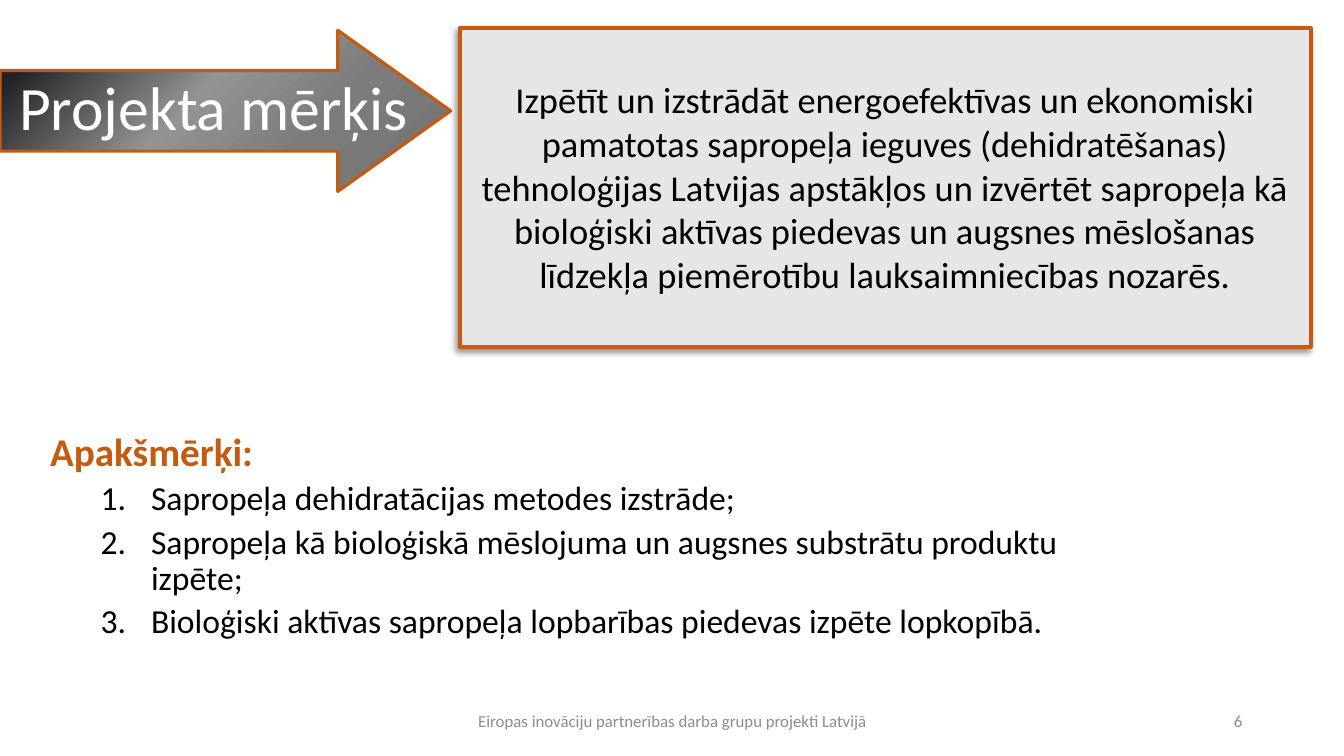
"""Builds the slide on the project goal and its sub-goals."""
from dataclasses import dataclass

import pptx
import pptx.dml.color
import pptx.enum.shapes
import pptx.enum.text
import pptx.oxml
import pptx.oxml.ns
import pptx.util
from pptx.util import Inches

ALIGN = pptx.enum.text.PP_ALIGN
ANCHOR = pptx.enum.text.MSO_ANCHOR
SHAPE = pptx.enum.shapes.MSO_SHAPE
NAMESPACE = pptx.oxml.ns.nsdecls("a")


@dataclass(frozen=True)
class Theme:
    """Colours, font and type sizes of the slide."""
    font: str = "Calibri"
    accent: str = "C55A11"
    panel: str = "E7E6E6"
    ink: str = "000000"
    light: str = "FFFFFF"
    muted: str = "8C8C8C"
    gradient: tuple = ((9, "222125"), (43, "939393"), (68, "7C7C7C"), (97, "747474"))
    title: int = 44
    heading: int = 28
    goal: int = 26
    item: int = 24
    footer: int = 12


def apply(target, values):
    """Sets each value of a dict as an attribute of the target."""
    for name, value in values.items():
        setattr(target, name, value)


def rgb(colour):
    """Turns a hex string into a colour."""
    return pptx.dml.color.RGBColor.from_string(colour)


class SlideBuilder:
    """Holds the theme and the current slide."""

    def __init__(self, slide, theme):
        """Keeps the slide and the theme."""
        self.slide, self.theme = slide, theme

    def add_text(self, para, text, size, colour, bold=False, **layout):
        """Fills one styled paragraph."""
        apply(para, layout)
        span = para.add_run()
        span.text = text
        apply(span.font, {"name": self.theme.font, "size": pptx.util.Pt(size), "bold": bold})
        span.font.color.rgb = rgb(colour)

    def frame(self, box, anchor):
        """Prepares the text frame of a box."""
        apply(box.text_frame, {"word_wrap": True, "vertical_anchor": anchor,
                               "auto_size": pptx.enum.text.MSO_AUTO_SIZE.NONE})
        return box.text_frame

    def title(self, text, left, top, width, height):
        """Places the title in front of the shapes drawn so far."""
        box = self.slide.shapes.title
        apply(box, {"left": left, "top": top, "width": width, "height": height})
        box.element.getparent().append(box.element)
        para = self.frame(box, ANCHOR.MIDDLE).paragraphs[0]
        self.add_text(para, text, self.theme.title, self.theme.light,
                      alignment=ALIGN.LEFT, line_spacing=0.9)

    def shape(self, kind, line_width, *place):
        """Adds an outlined preset shape without a shadow."""
        shape = self.slide.shapes.add_shape(kind, *place)
        shape.shadow.inherit = False
        shape.line.color.rgb = rgb(self.theme.accent)
        shape.line.width = pptx.util.Pt(line_width)
        return shape

    def arrow(self, *place):
        """Adds the right arrow with its gradient."""
        arrow = self.shape(SHAPE.RIGHT_ARROW, 2.25, *place)
        arrow.adjustments[0], arrow.adjustments[1] = 0.5, 0.7
        arrow.fill.gradient()
        arrow.fill.gradient_angle = 315
        stops = arrow.element.spPr.find(".//" + pptx.oxml.ns.qn("a:gsLst"))
        stops.clear()
        for percent, colour in self.theme.gradient:
            stops.append(pptx.oxml.parse_xml(
                f'<a:gs {NAMESPACE} pos="{percent * 1000}"><a:srgbClr val="{colour}"/></a:gs>'))

    def panel(self, text, *place):
        """Adds the shadowed panel with the goal."""
        panel = self.shape(SHAPE.RECTANGLE, 3, *place)
        panel.fill.solid()
        panel.fill.fore_color.rgb = rgb(self.theme.panel)
        effects = panel.element.spPr.find(pptx.oxml.ns.qn("a:effectLst"))
        effects.append(pptx.oxml.parse_xml(
            f'<a:outerShdw {NAMESPACE} blurRad="{pptx.util.Pt(4)}" dist="{pptx.util.Pt(3)}" '
            f'dir="{135 * 60000}" algn="tr" rotWithShape="0"><a:srgbClr val="{self.theme.ink}">'
            '<a:alpha val="40000"/></a:srgbClr></a:outerShdw>'))
        frame = self.frame(panel, ANCHOR.TOP)
        frame.margin_top = Inches(0.49)
        self.add_text(frame.paragraphs[0], text, self.theme.goal, self.theme.ink,
                      alignment=ALIGN.CENTER)

    def numbered_list(self, heading, items, *place):
        """Adds a heading followed by numbered items."""
        frame = self.frame(self.slide.shapes.add_textbox(*place), ANCHOR.TOP)
        self.add_text(frame.paragraphs[0], heading, self.theme.heading, self.theme.accent,
                      bold=True, line_spacing=0.9)
        for item in items:
            para = frame.add_paragraph()
            properties = para._p.get_or_add_pPr()
            for name, value in {"marL": Inches(1), "indent": Inches(-0.5)}.items():
                properties.set(name, str(value))
            properties.append(pptx.oxml.parse_xml(
                f'<a:buAutoNum {NAMESPACE} type="arabicPeriod"/>'))
            self.add_text(para, item, self.theme.item, self.theme.ink, level=1,
                          line_spacing=0.9, space_before=pptx.util.Pt(5))

    def footer(self, text, alignment, *place):
        """Adds a small muted line at the foot."""
        frame = self.frame(self.slide.shapes.add_textbox(*place), ANCHOR.MIDDLE)
        self.add_text(frame.paragraphs[0], text, self.theme.footer, self.theme.muted,
                      alignment=alignment)


def main():
    """Builds and saves the deck."""
    deck = pptx.Presentation()
    apply(deck, {"slide_width": Inches(13.33), "slide_height": Inches(7.5)})
    page = SlideBuilder(deck.slides.add_slide(deck.slide_layouts[5]), Theme())
    page.numbered_list(
        "Apakšmērķi:",
        ("Sapropeļa dehidratācijas metodes izstrāde;",
         "Sapropeļa kā bioloģiskā mēslojuma un augsnes substrātu produktu izpēte;",
         "Bioloģiski aktīvas sapropeļa lopbarības piedevas izpēte lopkopībā."),
        Inches(0.4), Inches(4.24), Inches(10.9), Inches(3.11))
    page.footer("Eiropas inovāciju partnerības darba grupu projekti Latvijā", ALIGN.CENTER,
                Inches(4.42), Inches(6.95), Inches(4.5), Inches(0.4))
    page.arrow(Inches(0), Inches(0.3), Inches(4.47), Inches(1.6))
    page.title("Projekta mērķis", Inches(0.09), Inches(0.37), Inches(11.5), Inches(1.45))
    page.panel(
        "Izpētīt un izstrādāt energoefektīvas un ekonomiski pamatotas sapropeļa ieguves "
        "(dehidratēšanas) tehnoloģijas Latvijas apstākļos un izvērtēt sapropeļa kā "
        "bioloģiski aktīvas piedevas un augsnes mēslošanas līdzekļa piemērotību "
        "lauksaimniecības nozarēs.",
        Inches(4.56), Inches(0.28), Inches(8.44), Inches(3.16))
    page.footer("6", ALIGN.RIGHT, Inches(9.42), Inches(6.95), Inches(3), Inches(0.4))
    deck.save("out.pptx")


if __name__ == "__main__":
    main()
